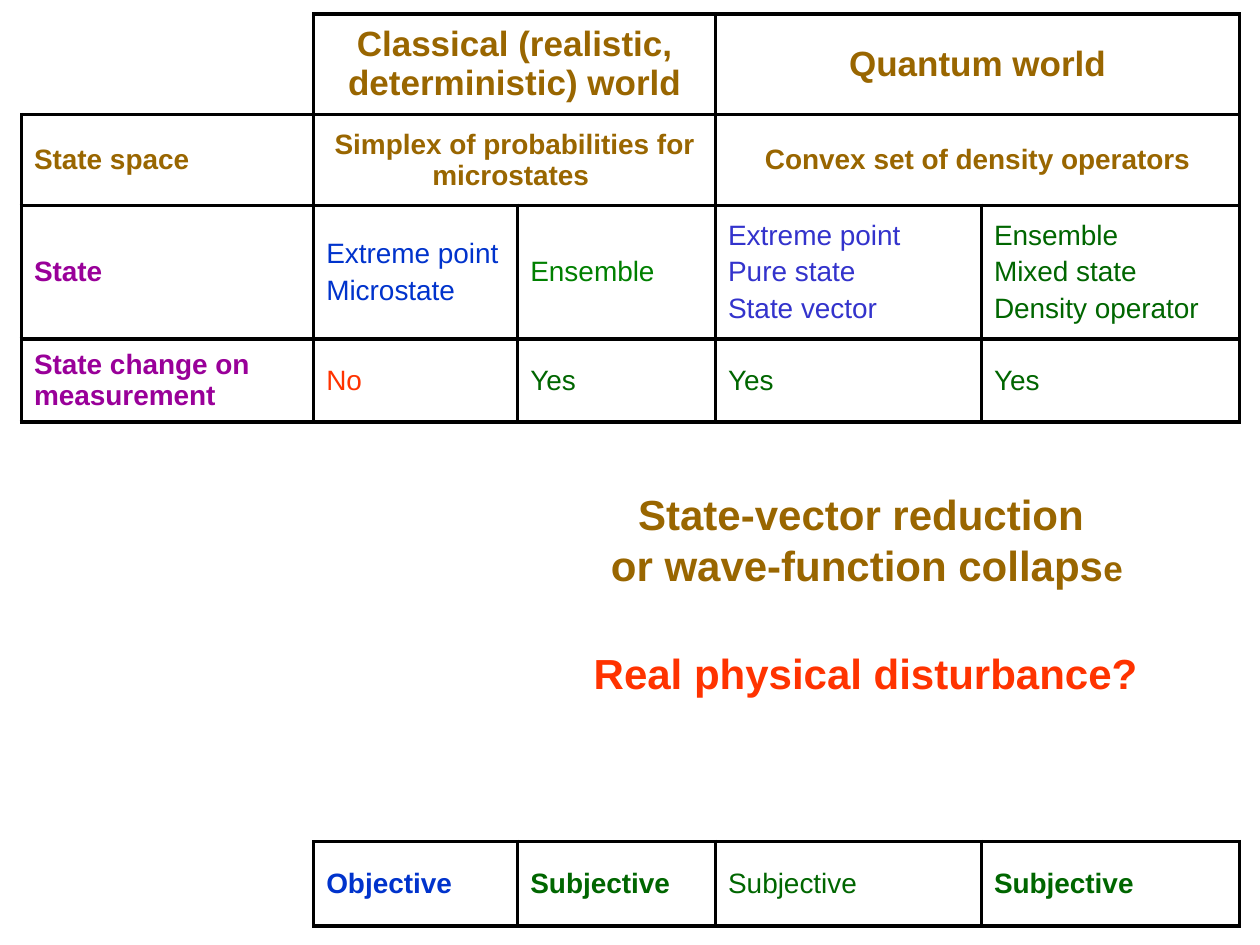
from lxml.etree import SubElement
from pptx import Presentation
from pptx.dml.color import RGBColor
from pptx.enum.text import MSO_ANCHOR, MSO_AUTO_SIZE, PP_ALIGN
from pptx.oxml.ns import qn
from pptx.util import Inches, Pt

BROWN, PURPLE, BLUE, INDIGO = "996600", "990099", "0033CC", "3333CC"
GREEN, DARK_GREEN, RED, BLACK = "008000", "006600", "FF3300", "000000"

# Cells: (lines, colour, bold, size, columns spanned); None is an empty or covered cell
COLUMNS = [2.32, 1.62, 1.57, 2.11, 2.05]
TABLE_LEFT = 0.17
YES = (["Yes"], DARK_GREEN, False, 16, 1)
COMPARISON = [
    [None,
     (["Classical (realistic, deterministic) world"], BROWN, True, 20, 2), None,
     (["Quantum world"], BROWN, True, 20, 2), None],
    [(["State space"], BROWN, True, 16, 1),
     (["Simplex of probabilities for microstates "], BROWN, True, 16, 2), None,
     (["Convex set of density operators"], BROWN, True, 16, 2), None],
    [(["State"], PURPLE, True, 16, 1),
     (["Extreme point", "Microstate"], BLUE, False, 16, 1),
     (["Ensemble"], GREEN, False, 16, 1),
     (["Extreme point", "Pure state", "State vector"], INDIGO, False, 16, 1),
     (["Ensemble", "Mixed state", "Density operator"], DARK_GREEN, False, 16, 1)],
    [(["State change on measurement"], PURPLE, True, 16, 1),
     (["No"], RED, False, 16, 1), YES, YES, YES],
]
VERDICT = [
    [None,
     (["Objective"], BLUE, True, 16, 1),
     (["Subjective"], DARK_GREEN, True, 16, 1),
     (["Subjective"], DARK_GREEN, False, 16, 1),
     (["Subjective"], DARK_GREEN, True, 16, 1)],
]
# Tables: top, row heights, cells, borders of the empty corner
TABLES = [
    (0.11, [0.8, 0.72, 1.06, 0.66], COMPARISON, "RB"),
    (6.68, [0.67], VERDICT, "R"),
]
# Remarks: left, top, width, height, colour, paragraphs of (text, size)
REMARKS = [
    (4.7, 3.83, 4.36, 0.91, BROWN,
     [[("State-vector reduction ", 24)],
      [("or wave-function collaps", 24), ("e", 20)]]),
    (4.4, 5.09, 4.94, 0.5, RED, [[("Real physical disturbance?", 24)]]),
]


def color(value):
    return RGBColor.from_string(value)


def add_span(para, text, size, shade, bold):
    span = para.add_run()
    span.text = text
    span.font.name = "Arial"
    span.font.size = Pt(size)
    span.font.bold = bold
    span.font.color.rgb = color(shade)


def next_paragraph(frame, index):
    return frame.add_paragraph() if index else frame.paragraphs[0]


def set_borders(cell, sides):
    properties = cell._tc.get_or_add_tcPr()
    for side in sides:
        line = SubElement(properties, qn(f"a:ln{side}"), w=str(Pt(2.25)))
        fill = SubElement(line, qn("a:solidFill"))
        SubElement(fill, qn("a:srgbClr"), val=BLACK)


def fill_cell(cell, content):
    lines, shade, bold, size, columns = content
    cell.vertical_anchor = MSO_ANCHOR.MIDDLE
    for index, text in enumerate(lines):
        para = next_paragraph(cell.text_frame, index)
        para.alignment = PP_ALIGN.CENTER if columns > 1 else PP_ALIGN.LEFT
        # Space before each paragraph: 20% of a line
        spacing = SubElement(para._p.get_or_add_pPr(), qn("a:spcBef"))
        SubElement(spacing, qn("a:spcPct"), val="20000")
        add_span(para, text, size, shade, bold)


def add_grid(page, top, heights, rows, corner_sides):
    table = page.shapes.add_table(
        len(rows), len(COLUMNS), Inches(TABLE_LEFT), Inches(top),
        Inches(sum(COLUMNS)), Inches(sum(heights))).table
    table.first_row = table.horz_banding = False
    for column, width in zip(table.columns, COLUMNS):
        column.width = Inches(width)
    for r, (height, row) in enumerate(zip(heights, rows)):
        table.rows[r].height = Inches(height)
        for c, content in enumerate(row):
            cell = table.cell(r, c)
            is_corner = content is None and c == 0
            set_borders(cell, corner_sides if is_corner else "LRTB")
            cell.fill.background()
            if content:
                fill_cell(cell, content)
                if content[-1] > 1:
                    cell.merge(table.cell(r, c + content[-1] - 1))


def add_remark(page, left, top, width, height, shade, paragraphs):
    box = page.shapes.add_textbox(*map(Inches, (left, top, width, height)))
    frame = box.text_frame
    frame.word_wrap = True
    frame.auto_size = MSO_AUTO_SIZE.SHAPE_TO_FIT_TEXT
    for index, spans in enumerate(paragraphs):
        para = next_paragraph(frame, index)
        para.alignment = PP_ALIGN.CENTER
        for text, size in spans:
            add_span(para, text, size, shade, True)


def main():
    deck = Presentation()
    deck.slide_width, deck.slide_height = Inches(10), Inches(7.5)
    page = deck.slides.add_slide(deck.slide_layouts[6])
    for table in TABLES:
        add_grid(page, *table)
    for remark in REMARKS:
        add_remark(page, *remark)
    deck.save("out.pptx")


if __name__ == "__main__":
    main()
